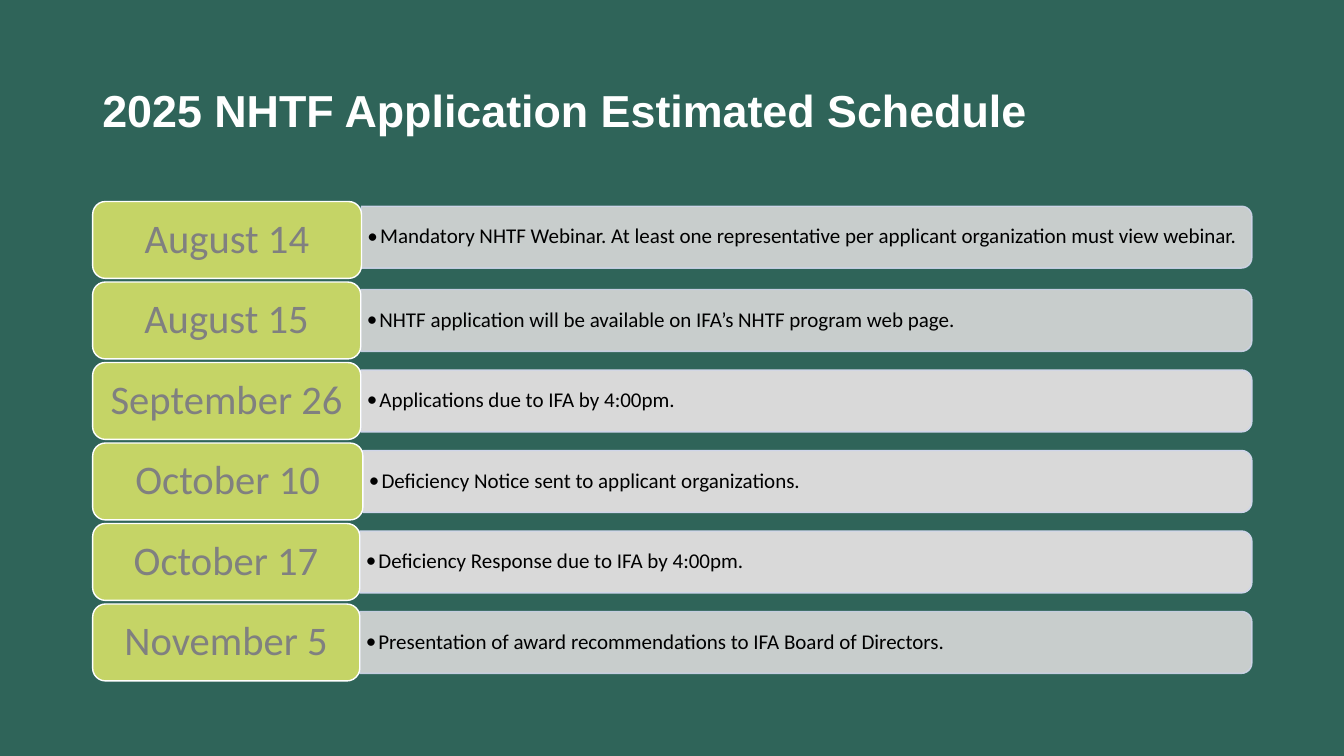
from dataclasses import dataclass

from lxml import etree
from pptx import Presentation
from pptx.dml.color import RGBColor
from pptx.enum import shapes, text
from pptx.oxml import ns
from pptx.util import Pt


@dataclass(frozen=True)
class Theme:
    background: str = "2F6459"
    white: str = "FFFFFF"
    bar: str = "D9D9D9"
    bar_line: str = "CFD5EA"
    badge: str = "C5D466"
    date: str = "808080"
    detail: str = "000000"
    heading_font: str = "Arial"
    body_font: str = "Calibri"
    heading_size: float = 32
    date_size: float = 29
    detail_size: float = 15


THEME = Theme()
LEFT, BAR_RIGHT = 66.2, 894.2
FIRST_CENTER, PITCH = 171.4, 57.5
BADGE_HEIGHT, BAR_HEIGHT = 54.9, 44.2

# date, detail, badge width, bar shift down, bar opacity in percent
SCHEDULE = [
    ("August 14", "Mandatory NHTF Webinar. At least one representative per applicant "
     "organization must view webinar.", 192, -2, 90),
    ("August 15", "NHTF application will be available on IFA’s NHTF program web page.",
     191.5, 0, 90),
    ("September 26", "Applications due to IFA by 4:00pm.", 191.5, 0, 100),
    ("October 10", "Deficiency Notice sent to applicant organizations.", 193, 0, 100),
    ("October 17", "Deficiency Response due to IFA by 4:00pm.", 190.8, 0, 100),
    ("November 5", "Presentation of award recommendations to IFA Board of Directors.",
     190.8, 0, 90),
]


def set_all(target, values):
    for name, value in values.items():
        setattr(target, name, value)


def write(shape, words, font, size, color, insets, bold=False, align=text.PP_ALIGN.LEFT):
    """Fill a shape with one vertically centred paragraph and return it."""
    side, edge = map(Pt, insets)
    frame = shape.text_frame
    set_all(frame, {
        "word_wrap": True, "vertical_anchor": text.MSO_ANCHOR.MIDDLE,
        "margin_left": side, "margin_right": side,
        "margin_top": edge, "margin_bottom": edge,
    })
    para = frame.paragraphs[0]
    set_all(para, {"alignment": align, "line_spacing": 0.9})
    span = para.add_run()
    span.text = words
    set_all(span.font, {"name": font, "size": Pt(size), "bold": bold})
    span.font.color.rgb = RGBColor.from_string(color)
    return para


def add_bullet(para, indent):
    properties = para._p.get_or_add_pPr()
    properties.set("marL", str(Pt(indent)))
    properties.set("indent", str(-Pt(indent)))
    etree.SubElement(properties, ns.qn("a:buFont")).set("typeface", THEME.body_font)
    etree.SubElement(properties, ns.qn("a:buChar")).set("char", "•")


def set_opacity(shape, percent):
    for color in shape._element.spPr.iter(ns.qn("a:srgbClr")):
        etree.SubElement(color, ns.qn("a:alpha")).set("val", str(percent * 1000))


def add_box(page, kind, left, top, width, height, fill, line):
    box = page.shapes.add_shape(kind, Pt(left), Pt(top), Pt(width), Pt(height))
    box.shadow.inherit = False
    box.fill.solid()
    box.fill.fore_color.rgb = RGBColor.from_string(fill)
    box.line.color.rgb = RGBColor.from_string(line)
    box.line.width = Pt(1)
    return box


def add_title(page, words):
    box = page.shapes.add_textbox(Pt(66), Pt(28.8), Pt(828), Pt(104.4))
    write(box, words, THEME.heading_font, THEME.heading_size, THEME.white, (7.2, 3.6), bold=True)


def add_bar(page, left, center, words, opacity):
    """Draw a bar rounded at its right end, with a bulleted line of text."""
    length = BAR_RIGHT - left
    bar = add_box(page, shapes.MSO_SHAPE.ROUND_2_SAME_RECTANGLE,
                  left + (length - BAR_HEIGHT) / 2, center - length / 2,
                  BAR_HEIGHT, length, THEME.bar, THEME.bar_line)
    bar.rotation = 90
    set_opacity(bar, opacity)
    label = page.shapes.add_textbox(Pt(left), Pt(center - 20), Pt(length - 2), Pt(40))
    para = write(label, words, THEME.body_font, THEME.detail_size, THEME.detail, (4.3, 2.2))
    add_bullet(para, 9)


def add_badge(page, center, width, words):
    badge = add_box(page, shapes.MSO_SHAPE.ROUNDED_RECTANGLE, LEFT, center - BADGE_HEIGHT / 2,
                    width, BADGE_HEIGHT, THEME.badge, THEME.white)
    write(badge, words, THEME.body_font, THEME.date_size, THEME.date, (8, 4),
          align=text.PP_ALIGN.CENTER)


def main():
    deck = Presentation()
    set_all(deck, {"slide_width": Pt(960), "slide_height": Pt(540)})
    page = deck.slides.add_slide(deck.slide_layouts[6])
    page.background.fill.solid()
    page.background.fill.fore_color.rgb = RGBColor.from_string(THEME.background)

    add_title(page, "2025 NHTF Application Estimated Schedule")
    for row, (date, detail, width, shift, opacity) in enumerate(SCHEDULE):
        center = FIRST_CENTER + row * PITCH
        add_bar(page, LEFT + width, center + shift, detail, opacity)
        add_badge(page, center, width, date)

    deck.save("out.pptx")


if __name__ == "__main__":
    main()
